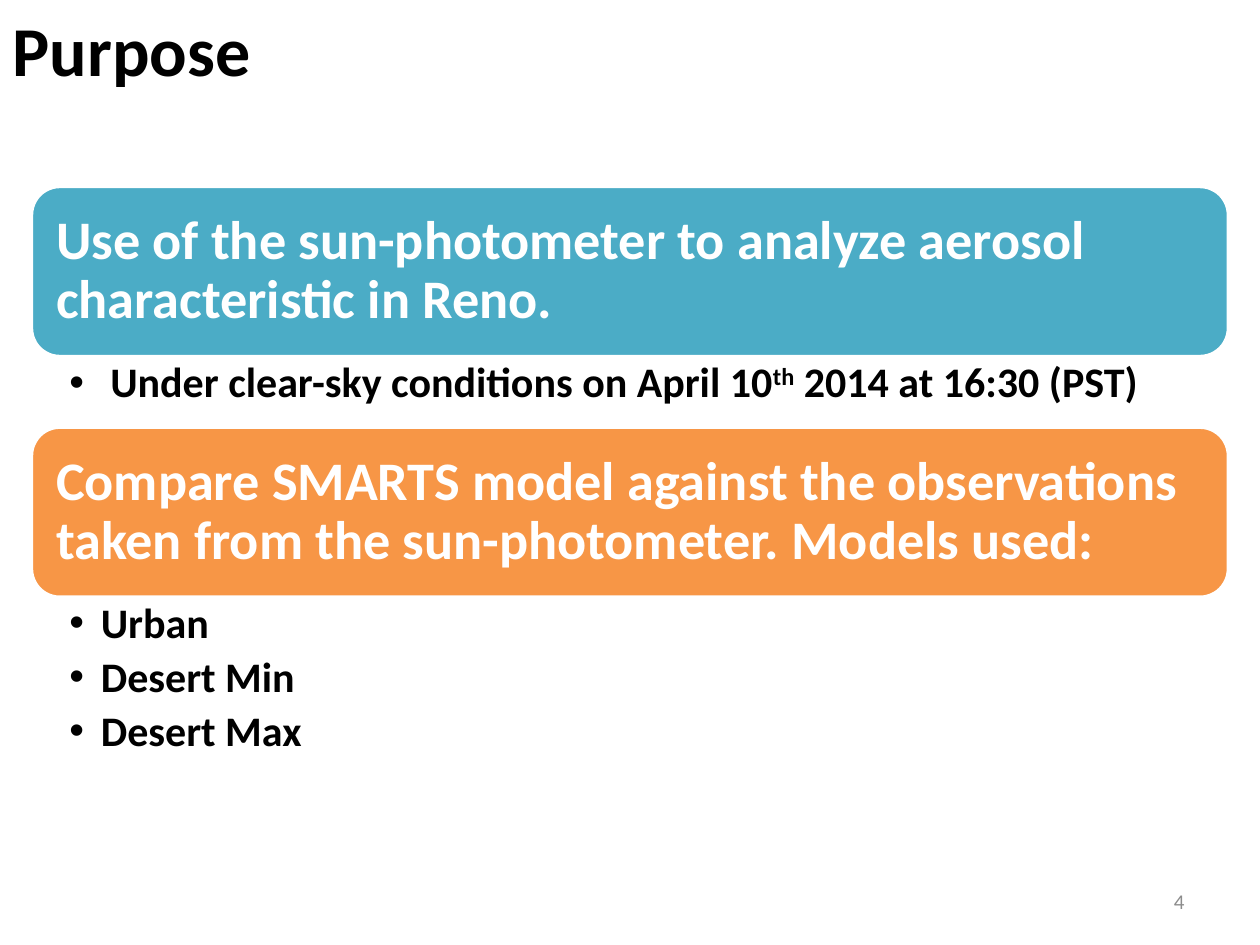
import pptx
import pptx.util
import pptx.dml.color
import pptx.enum.shapes
import pptx.enum.text
import pptx.oxml.ns
import lxml.etree

Inches = pptx.util.Inches
Pt = pptx.util.Pt
ALIGN = pptx.enum.text.PP_ALIGN
ANCHOR = pptx.enum.text.MSO_ANCHOR

COLORS = {
    "teal": "4BACC6",
    "orange": "F79646",
    "white": "FFFFFF",
    "black": "000000",
    "gray": "8C8C8C",
}


class PurposeSlide:
    font = "Calibri"
    left = 0.25
    width = 9.5
    heading_height = 1.35

    def __init__(self, slide):
        self.slide = slide

    def color(self, name):
        return pptx.dml.color.RGBColor.from_string(COLORS[name])

    def place(self, shape, left, top, width, height):
        shape.left, shape.top = Inches(left), Inches(top)
        shape.width, shape.height = Inches(width), Inches(height)

    def frame(self, shape, anchor, insets=(0.1, 0.05, 0.1, 0.05)):
        frame = shape.text_frame
        frame.word_wrap = True
        frame.auto_size = pptx.enum.text.MSO_AUTO_SIZE.NONE
        frame.vertical_anchor = anchor
        frame.margin_left, frame.margin_top, frame.margin_right, frame.margin_bottom = map(Inches, insets)
        return frame

    def run(self, para, text, size, color, bold=True, baseline=0):
        run = para.add_run()
        run.text = text
        run.font.name = self.font
        run.font.size = Pt(size)
        run.font.bold = bold
        run.font.color.rgb = self.color(color)
        if baseline:
            run.font._element.set("baseline", str(baseline * 1000))

    def title(self, text):
        title = self.slide.shapes.title
        self.place(title, 0, 0, 5.75, 0.77)
        para = self.frame(title, ANCHOR.TOP).paragraphs[0]
        para.alignment = ALIGN.LEFT
        self.run(para, text, 40, "black")

    def heading(self, text, top, fill):
        box = self.slide.shapes.add_shape(
            pptx.enum.shapes.MSO_SHAPE.ROUNDED_RECTANGLE,
            Inches(self.left), Inches(top), Inches(self.width), Inches(self.heading_height))
        box.shadow.inherit = False
        box.fill.solid()
        box.fill.fore_color.rgb = self.color(fill)
        box.line.color.rgb = self.color("white")
        box.line.width = Pt(2)
        para = self.frame(box, ANCHOR.MIDDLE, (0.13, 0.13, 0.13, 0.13)).paragraphs[0]
        para.alignment = ALIGN.LEFT
        para.line_spacing = 0.9
        self.run(para, text, 31, "white")

    def bullets(self, body, items, top, height):
        self.place(body, self.left, top, self.width, height)
        frame = self.frame(body, ANCHOR.TOP, (0.3, 0.04, 0.24, 0.04))
        for index, parts in enumerate(items):
            para = frame.add_paragraph() if index else frame.paragraphs[0]
            para.level = 1
            para.line_spacing = 0.9
            para.space_before = Pt(0)
            para.space_after = Pt(4.8)
            props = para._p.get_or_add_pPr()
            props.set("marL", str(Inches(0.25)))
            props.set("indent", str(Inches(-0.25)))
            bullet = lxml.etree.SubElement(props, pptx.oxml.ns.qn("a:buChar"))
            bullet.set("char", "•")
            for text, baseline in parts:
                self.run(para, text, 24, "black", baseline=baseline)

    def section(self, heading, fill, top, body, items, height):
        self.heading(heading, top, fill)
        self.bullets(body, items, top + self.heading_height, height)
        return top + self.heading_height + height

    def page_number(self, text):
        box = self.slide.shapes.add_textbox(Inches(7.17), Inches(6.95), Inches(2.33), Inches(0.4))
        para = self.frame(box, ANCHOR.MIDDLE).paragraphs[0]
        para.alignment = ALIGN.RIGHT
        self.run(para, text, 12, "gray", bold=False)


def main():
    deck = pptx.Presentation()
    deck.slide_width, deck.slide_height = Inches(10), Inches(7.5)
    slide = deck.slides.add_slide(deck.slide_layouts.get_by_name("Two Content"))
    page = PurposeSlide(slide)
    page.title("Purpose")
    conditions = [[
        (" Under clear-sky conditions on April 10", 0),
        ("th", 30),
        (" 2014 at 16:30 (PST)", 0),
    ]]
    models = [[(name, 0)] for name in ("Urban", "Desert Min", "Desert Max")]
    next_top = page.section(
        "Use of the sun-photometer to analyze aerosol characteristic in Reno.",
        "teal", 1.48, slide.placeholders[1], conditions, 0.56)
    page.section(
        "Compare SMARTS model against the observations taken from the sun-photometer. Models used:",
        "orange", next_top, slide.placeholders[2], models, 1.37)
    page.page_number("4")
    deck.save("out.pptx")


if __name__ == "__main__":
    main()
